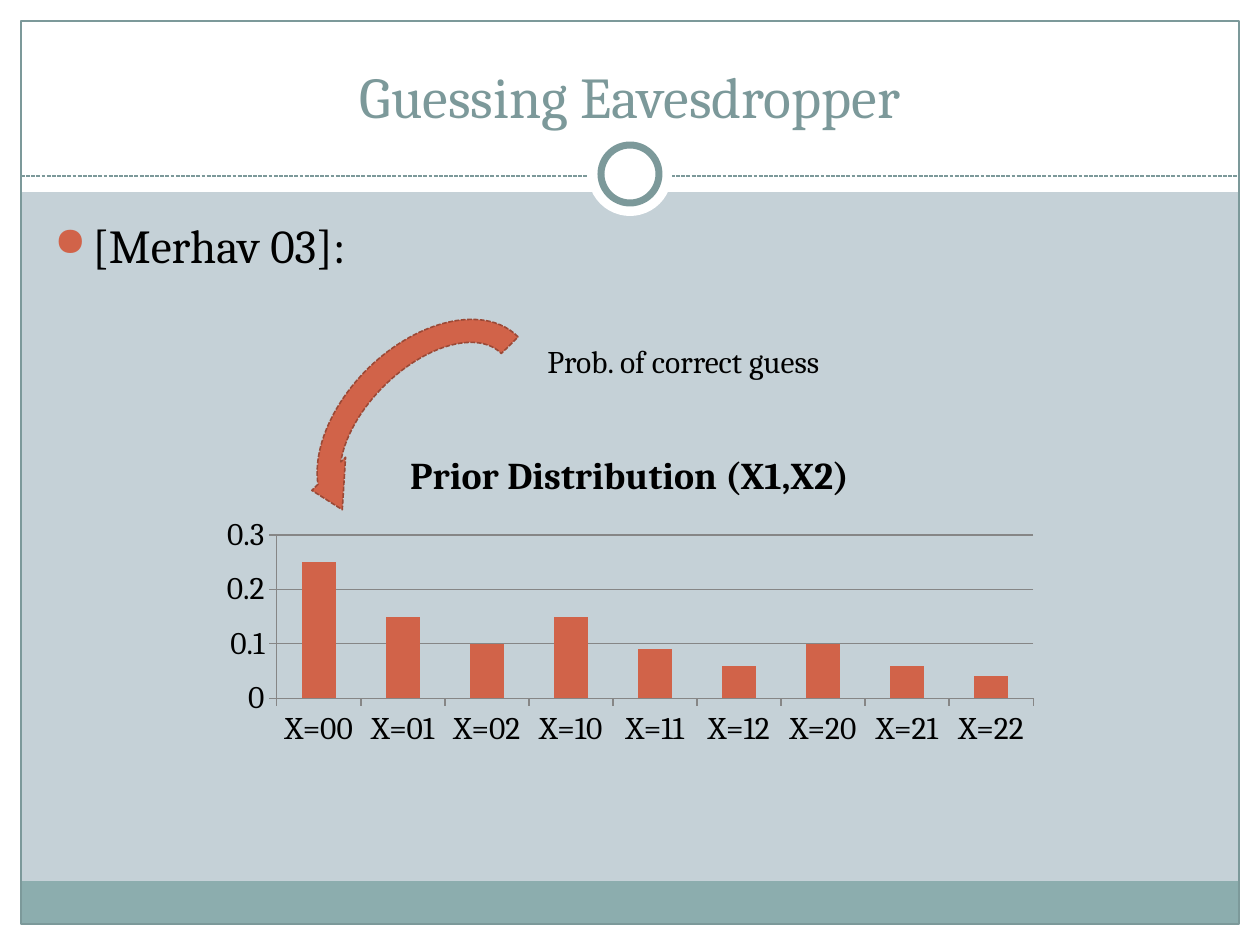
from lxml.etree import SubElement
from pptx import Presentation
from pptx.chart.data import CategoryChartData
from pptx.dml.color import RGBColor
from pptx.enum.chart import XL_CHART_TYPE, XL_TICK_MARK
from pptx.enum.dml import MSO_LINE
from pptx.enum.shapes import MSO_CONNECTOR, MSO_SHAPE
from pptx.enum.text import MSO_ANCHOR, PP_ALIGN
from pptx.oxml.ns import qn
from pptx.util import Inches, Pt

FONT = "Cambria"
HEX = {"back": "C5D1D7", "white": "FFFFFF", "band": "8CADAE", "frame": "7C999A",
       "accent": "D16349", "edge": "9B4936", "text": "000000", "grid": "868686"}


def px(n):
    return Inches(n / 126)


def rgb(name):
    return RGBColor.from_string(HEX[name])


def style(font, size, color="text", bold=False):
    font.name, font.size, font.bold = FONT, Pt(size), bold
    font.color.rgb = rgb(color)


def outline(line, color, width, dash=None):
    line.color.rgb, line.width = rgb(color), Pt(width)
    if dash:
        line.dash_style = dash


def add_form(slide, kind, box, fill=None):
    form = slide.shapes.add_shape(kind, *map(px, box))
    form.shadow.inherit = False
    form.line.fill.background()
    if fill:
        form.fill.solid()
        form.fill.fore_color.rgb = rgb(fill)
    else:
        form.fill.background()
    return form


def add_text(slide, box, text, size, color="text", wrap=True):
    frame = slide.shapes.add_textbox(*map(px, box)).text_frame
    frame.word_wrap = wrap
    para = frame.paragraphs[0]
    para.text = text
    style(para.font, size, color)
    return frame, para


def draw_frame(slide, box):
    x, y, w, h = box
    rim, head, foot = 21, 192, 43
    # White margins and the header
    for part in ((x, y + h - rim, w, rim), (x, y, w, head),
                 (x, y, rim, h), (x + w - rim, y, rim, h)):
        add_form(slide, MSO_SHAPE.RECTANGLE, part, "white")
    # Footer band and border
    inner = w - 2 * rim
    add_form(slide, MSO_SHAPE.RECTANGLE,
             (x + rim, y + h - rim - foot, inner, foot), "band")
    border = add_form(slide, MSO_SHAPE.RECTANGLE,
                      (x + rim, y + rim, inner, h - 2 * rim))
    outline(border.line, "frame", 0.75)
    # Dashed rule
    rule = slide.shapes.add_connector(MSO_CONNECTOR.STRAIGHT, px(x + rim), px(y + 176),
                                      px(x + w - rim), px(y + 176))
    outline(rule.line, "frame", 0.75, MSO_LINE.SQUARE_DOT)
    SubElement(rule.line._get_or_add_ln().getparent(), qn("a:effectLst"))
    # Ring on the rule
    mid = x + w // 2
    for size in (84, 58):
        ring = add_form(slide, MSO_SHAPE.OVAL,
                        (mid - size // 2, y + 174 - size // 2, size, size), "white")
    outline(ring.line, "frame", 4)


def draw_title(slide, box):
    frame, para = add_text(slide, box, "Guessing Eavesdropper", 33, "frame")
    frame.vertical_anchor = MSO_ANCHOR.BOTTOM
    para.alignment = PP_ALIGN.CENTER


def draw_body(slide, box):
    para = add_text(slide, box, "[Merhav 03]:", 27)[1]
    para.space_before = Pt(5)
    # Round bullet with a hanging indent
    props = para._p.get_or_add_pPr()
    props.set("marL", str(px(38)))
    props.set("indent", str(-px(38)))
    bullet = [("a:buClr", {}), ("a:buSzPct", {"val": "85000"}),
              ("a:buChar", {"char": "●"})]
    for at, (tag, attrs) in enumerate(bullet):
        node = props.makeelement(qn(tag), attrs)
        if tag == "a:buClr":
            SubElement(node, qn("a:srgbClr"), val=HEX["accent"])
        props.insert(at + 1, node)


def draw_chart(slide, box):
    data = CategoryChartData()
    data.categories = [f"X={a}{b}" for a in range(3) for b in range(3)]
    data.add_series("Series 1", (0.25, 0.15, 0.1, 0.15, 0.09, 0.06, 0.1, 0.06, 0.04))
    chart = slide.shapes.add_chart(XL_CHART_TYPE.COLUMN_CLUSTERED,
                                   *map(px, box), data).chart
    style(chart.font, 18)
    chart.has_legend = False
    # Heading
    chart.has_title = True
    para = chart.chart_title.text_frame.paragraphs[0]
    para.text = "Prior Distribution (X1,X2)"
    style(para.font, 21.6, bold=True)
    # Bars
    plot = chart.plots[0]
    plot.vary_by_categories = False
    plot.gap_width = 150
    fill = plot.series[0].format.fill
    fill.solid()
    fill.fore_color.rgb = rgb("accent")
    # Axes and grid
    for axis in (chart.category_axis, chart.value_axis):
        axis.major_tick_mark = XL_TICK_MARK.OUTSIDE
        outline(axis.format.line, "grid", 0.75)
    outline(chart.value_axis.major_gridlines.format.line, "grid", 0.75)


def draw_note(slide, box):
    x, y, w, h = box
    # Label
    add_text(slide, (x + 250, y + 3, 329, 50), "Prob. of correct guess", 18, wrap=False)
    # Curved arrow down to the first bar
    arrow = add_form(slide, MSO_SHAPE.CIRCULAR_ARROW, (x, y, 282, h), "accent")
    arrow.rotation = 315.5
    arrow._element.spPr.get_or_add_xfrm().set("flipH", "1")
    outline(arrow.line, "edge", 0.9, MSO_LINE.SQUARE_DOT)


def main():
    deck = Presentation()
    deck.slide_width, deck.slide_height = px(1260), px(945)
    slide = deck.slides.add_slide(deck.slide_layouts[6])
    back = slide.background.fill
    back.solid()
    back.fore_color.rgb = rgb("back")
    draw_frame(slide, (0, 0, 1260, 945))
    draw_title(slide, (42, 32, 1176, 104))
    draw_body(slide, (42, 210, 1172, 630))
    draw_chart(slide, (210, 431, 840, 323))
    draw_note(slide, (285, 333, 579, 189))
    deck.save("out.pptx")


if __name__ == "__main__":
    main()
